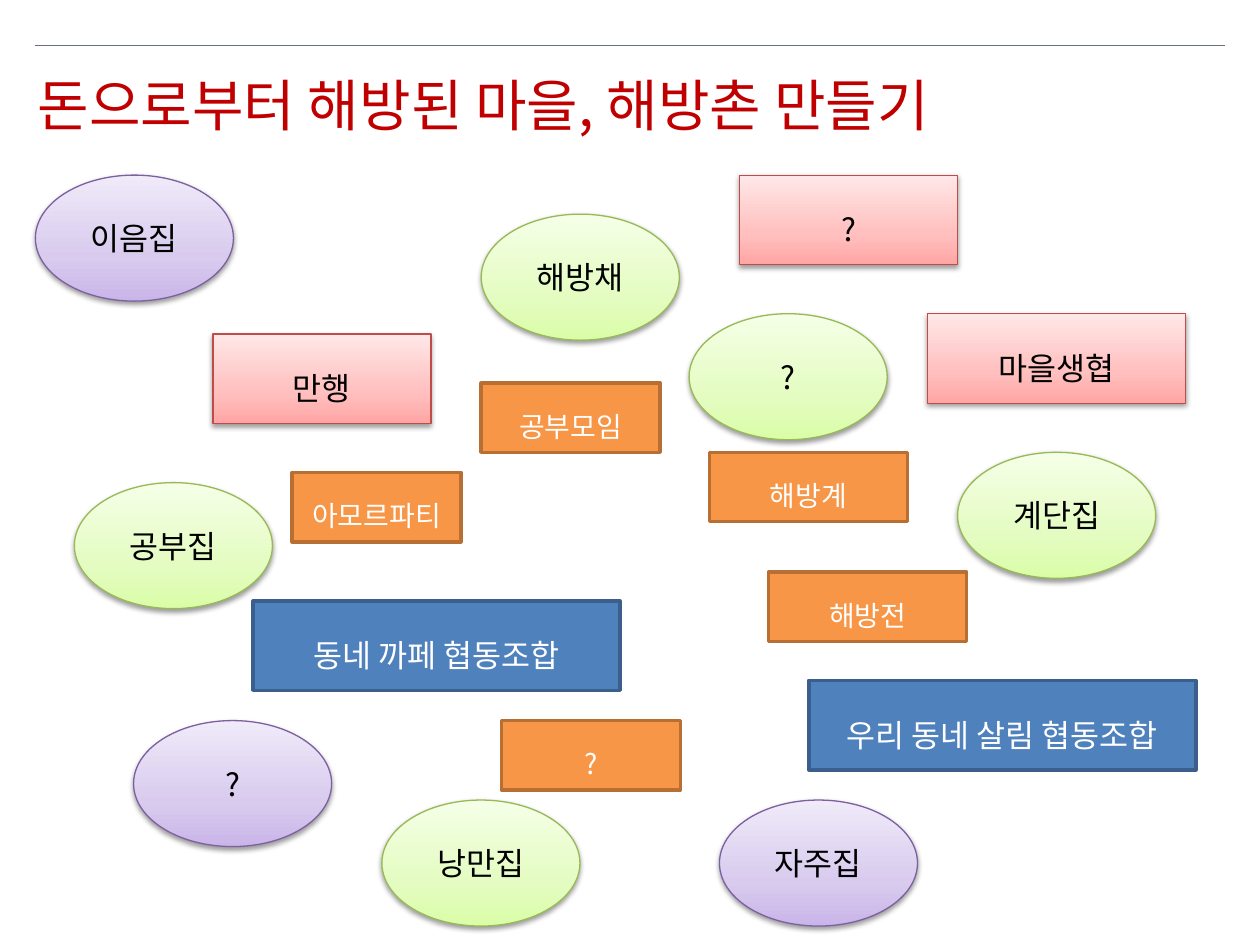
from copy import deepcopy
from dataclasses import dataclass
from typing import Optional

from lxml import etree
from pptx import Presentation, util as u
from pptx.dml.color import RGBColor
from pptx.enum import shapes, text
from pptx.oxml import parse_xml
from pptx.oxml.ns import nsdecls, qn


@dataclass(frozen=True)
class Style:
    """Look shared by all places of one kind."""
    fills: tuple  # one colour, or the stops of a gradient from bottom to top
    line: str
    ink: str
    size: int
    height: float
    outline: int = shapes.MSO_SHAPE.RECTANGLE
    line_width: float = 2
    line_spacing: Optional[float] = 1.5


@dataclass(frozen=True)
class Theme:
    font: str = "Noto Sans CJK KR"
    title_color: str = "C00000"
    title_size: int = 32
    rule_color: str = "68727E"
    stops: tuple = (0, 0.35, 1)
    green_house: Style = Style(("DAFDA7", "E4FCC2", "F5FFE7"), "98B955", "000000",
                               18, 72, shapes.MSO_SHAPE.OVAL, 0.75, None)
    purple_house: Style = Style(("C9B5E8", "D8CBEE", "F0EAF9"), "7D60A0", "000000",
                                18, 72, shapes.MSO_SHAPE.OVAL, 0.75, None)
    partner: Style = Style(("FFA6A5", "FFC0BF", "FFE7E7"), "BF4C48", "000000",
                           18, 51.1, line_width=0.75)
    activity: Style = Style(("F79646",), "B76F34", "FFFFFF", 16, 39.6)
    cooperative: Style = Style(("4F81BD",), "3A5F8C", "FFFFFF", 18, 51.1)


@dataclass(frozen=True)
class Place:
    name: str
    style: Style
    left: float
    top: float
    width: float = 113.2


THEME = Theme()

PLACES = (
    Place("우리 동네 살림 협동조합", THEME.cooperative, 462.2, 388.8, 221.2),
    Place("해방채", THEME.green_house, 275, 122.4),
    Place("공부집", THEME.green_house, 42.5, 275.8),
    Place("?", THEME.purple_house, 76.3, 411.8),
    Place("낭만집", THEME.green_house, 218.2, 457.2),
    Place("동네 까페 협동조합", THEME.cooperative, 144.7, 343.4, 209.5),
    Place("아모르파티", THEME.activity, 167, 270, 96.5),
    Place("마을생협", THEME.partner, 529.9, 179.3, 147.6),
    Place("만행", THEME.partner, 121.7, 190.8, 124.6),
    Place("?", THEME.partner, 422.6, 100.1, 124.6),
    Place("해방전", THEME.activity, 439.2, 326.9),
    Place("공부모임", THEME.activity, 275, 218.9, 102.2),
    Place("자주집", THEME.purple_house, 411.1, 457.2),
    Place("이음집", THEME.purple_house, 20.2, 100.1),
    Place("계단집", THEME.green_house, 547.2, 258.5),
    Place("해방계", THEME.activity, 405.4, 258.5),
    Place("?", THEME.green_house, 393.8, 179.3),
    Place("?", THEME.activity, 286.6, 411.8, 102.2),
)


def rgb(color: str) -> RGBColor:
    return RGBColor.from_string(color)


def write(frame, words: str, size: int, color: str, align, spacing=None) -> None:
    frame.text = words
    frame.word_wrap = True
    paragraph = frame.paragraphs[0]
    paragraph.alignment = align
    if spacing:
        paragraph.line_spacing = spacing
    for run in paragraph.runs:
        run.font.size = u.Pt(size)
        run.font.name = THEME.font
        run.font.color.rgb = rgb(color)
        east_asian = etree.SubElement(run.font._element, qn("a:ea"))
        east_asian.set("typeface", THEME.font)


def fill_gradient(shape, colors: tuple) -> None:
    shape.fill.gradient()
    shape.fill.gradient_angle = 90
    stop_list = shape._element.spPr.find(".//" + qn("a:gsLst"))
    stop_list.append(deepcopy(stop_list[-1]))  # the default has two stops
    for stop, position, color in zip(shape.fill.gradient_stops, THEME.stops, colors):
        stop.position = position
        stop.color.rgb = rgb(color)


def add_soft_shadow(shape) -> None:
    shape._element.spPr.find(qn("a:effectLst")).append(parse_xml(
        f'<a:outerShdw {nsdecls("a")} blurRad="{u.Pt(3.1)}" dist="{u.Pt(1.6)}" '
        'dir="5400000" rotWithShape="0"><a:srgbClr val="000000">'
        '<a:alpha val="38000"/></a:srgbClr></a:outerShdw>'))


def draw_place(slide, place: Place) -> None:
    style = place.style
    shape = slide.shapes.add_shape(style.outline, u.Pt(place.left), u.Pt(place.top),
                                   u.Pt(place.width), u.Pt(style.height))
    shape.shadow.inherit = False
    if len(style.fills) > 1:
        fill_gradient(shape, style.fills)
        add_soft_shadow(shape)
    else:
        shape.fill.solid()
        shape.fill.fore_color.rgb = rgb(style.fills[0])
    shape.line.color.rgb = rgb(style.line)
    shape.line.width = u.Pt(style.line_width)
    shape.text_frame.vertical_anchor = text.MSO_ANCHOR.MIDDLE
    write(shape.text_frame, place.name, style.size, style.ink,
          text.PP_ALIGN.CENTER, style.line_spacing)


def draw_heading(slide) -> None:
    # Title
    title = slide.shapes.title
    title.left, title.top = u.Pt(14.4), u.Pt(36.7)
    title.width, title.height = u.Pt(686.2), u.Pt(46.1)
    write(title.text_frame, "돈으로부터 해방된 마을, 해방촌 만들기", THEME.title_size,
          THEME.title_color, text.PP_ALIGN.LEFT)
    title.text_frame.vertical_anchor = text.MSO_ANCHOR.TOP
    title.text_frame.auto_size = text.MSO_AUTO_SIZE.SHAPE_TO_FIT_TEXT

    # Rule above the title
    rule = slide.shapes.add_connector(shapes.MSO_CONNECTOR.STRAIGHT, u.Pt(20.2),
                                      u.Pt(25.9), u.Pt(699.8), u.Pt(25.9))
    rule.line.color.rgb = rgb(THEME.rule_color)
    rule.line.width = u.Pt(0.25)
    etree.SubElement(rule._element.spPr, qn("a:effectLst"))


def main() -> None:
    deck = Presentation()
    deck.slide_width, deck.slide_height = u.Pt(720), u.Pt(540)
    slide = deck.slides.add_slide(deck.slide_layouts.get_by_name("Title Only"))
    draw_heading(slide)
    for place in PLACES:
        draw_place(slide, place)
    deck.save("out.pptx")


if __name__ == "__main__":
    main()
